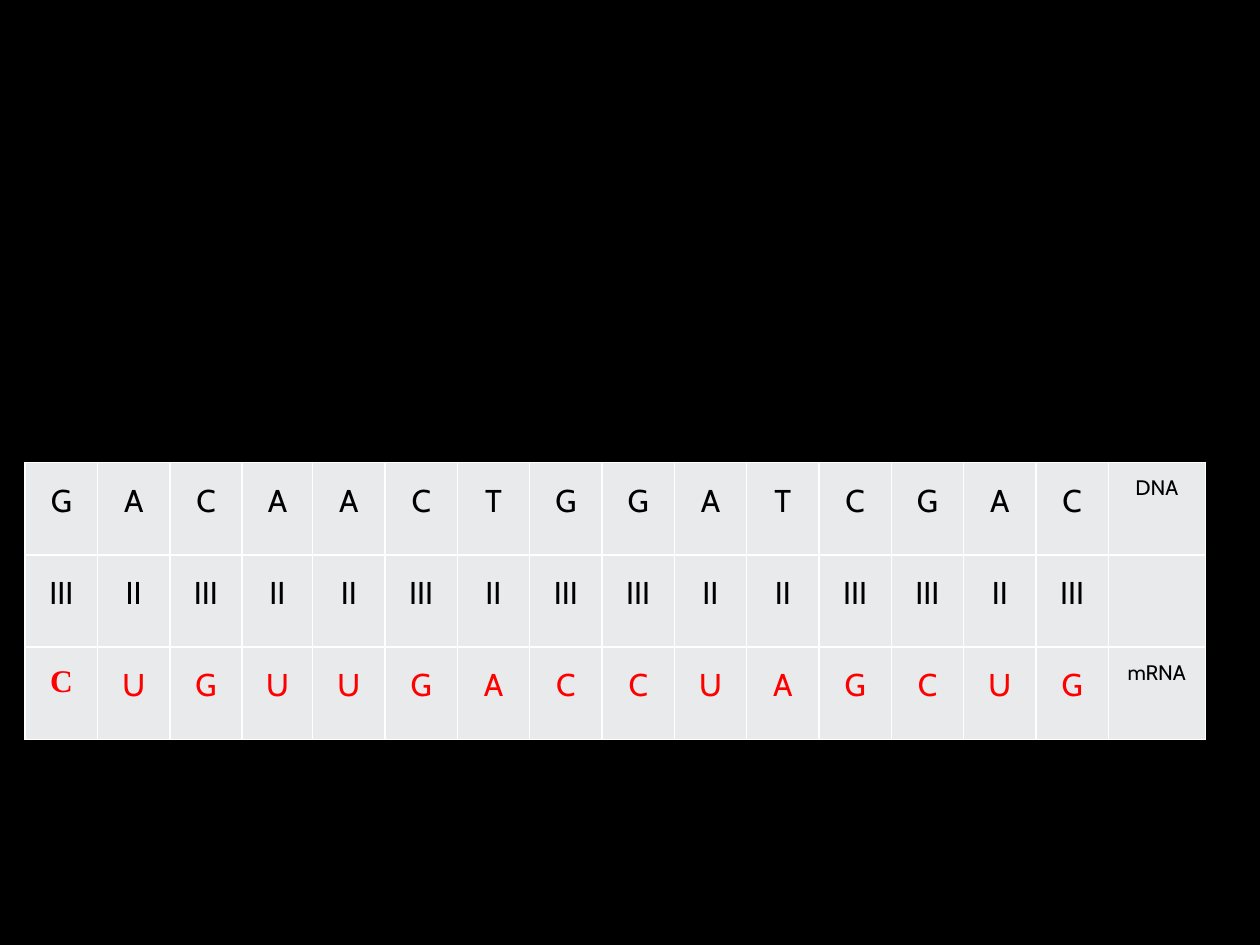
from dataclasses import dataclass

from lxml.etree import SubElement
from pptx import Presentation
from pptx.dml.color import RGBColor
from pptx.enum.text import PP_ALIGN
from pptx.oxml.ns import qn
from pptx.util import Inches, Pt


@dataclass(frozen=True)
class Theme:
    """Colours, fonts and sizes of the slide."""
    background: str = "000000"
    cell: str = "E9EAEC"
    border: str = "FFFFFF"
    ink: str = "000000"
    accent: str = "FF0000"
    font: str = "Cabin"
    serif: str = "Times New Roman"
    base_size: int = 18
    label_size: int = 12
    border_width: int = 1


THEME = Theme()
DNA = "GACAACTGGATCGAC"
MRNA_OF = {"G": "C", "C": "G", "A": "U", "T": "A"}
BONDS_OF = {"G": "III", "C": "III", "A": "II", "T": "II"}
NARROW_COLUMN = 3


def add_borders(cell):
    """Draw a thin line on all four sides of a cell."""
    properties = cell._tc.get_or_add_tcPr()
    for index, side in enumerate(("a:lnL", "a:lnR", "a:lnT", "a:lnB")):
        line = properties.makeelement(qn(side), {"w": str(Pt(THEME.border_width))})
        fill = SubElement(line, qn("a:solidFill"))
        SubElement(fill, qn("a:srgbClr"), {"val": THEME.border})
        properties.insert(index, line)


def style_cell(cell):
    """Set the fill, margins and borders of a cell."""
    cell.fill.solid()
    cell.fill.fore_color.rgb = RGBColor.from_string(THEME.cell)
    cell.margin_left = cell.margin_right = Inches(0.07)
    cell.margin_top = cell.margin_bottom = Inches(0)
    add_borders(cell)


def write_cell(cell, text, size, color, font=THEME.font, bold=False):
    """Write one centred run with a hanging indent into a cell."""
    para = cell.text_frame.paragraphs[0]
    para.alignment = PP_ALIGN.CENTER
    para.line_spacing = 1.5
    properties = para._p.get_or_add_pPr()
    properties.set("marL", str(Inches(0.25)))
    properties.set("indent", str(Inches(-0.25)))
    span = para.add_run()
    span.text = text
    span.font.size = Pt(size)
    span.font.name = font
    span.font.bold = bold
    span.font.color.rgb = RGBColor.from_string(color)


def add_pairing_table(page, left, top, width, height):
    """Place the table that pairs each DNA base with its mRNA base."""
    rows = (
        (DNA, "DNA", THEME.ink),
        ([BONDS_OF[base] for base in DNA], "", THEME.ink),
        ([MRNA_OF[base] for base in DNA], "mRNA", THEME.accent),
    )
    last = len(DNA)
    frame = page.shapes.add_table(len(rows), last + 1, left, top, width, height)
    table = frame.table
    table.first_row = table.horz_banding = False

    special = {NARROW_COLUMN: Inches(0.56), last: Inches(0.77)}
    regular = (width - sum(special.values())) // (last + 1 - len(special))
    for index, column in enumerate(table.columns):
        column.width = special.get(index, regular)

    for row_index, (symbols, label, color) in enumerate(rows):
        table.rows[row_index].height = height // len(rows)
        for column_index, symbol in enumerate(symbols):
            cell = table.cell(row_index, column_index)
            style_cell(cell)
            first_mrna = color == THEME.accent and column_index == 0
            font = THEME.serif if first_mrna else THEME.font
            write_cell(cell, symbol, THEME.base_size, color, font, first_mrna)
        label_cell = table.cell(row_index, last)
        style_cell(label_cell)
        if label:
            write_cell(label_cell, label, THEME.label_size, THEME.ink)


def main():
    """Build the deck and save it."""
    deck = Presentation()
    deck.slide_width, deck.slide_height = Inches(10), Inches(7.5)
    page = deck.slides.add_slide(deck.slide_layouts[6])
    page.background.fill.solid()
    page.background.fill.fore_color.rgb = RGBColor.from_string(THEME.background)
    add_pairing_table(page, Inches(0.2), Inches(3.67), Inches(9.37), Inches(2.2))
    deck.save("out.pptx")


if __name__ == "__main__":
    main()
